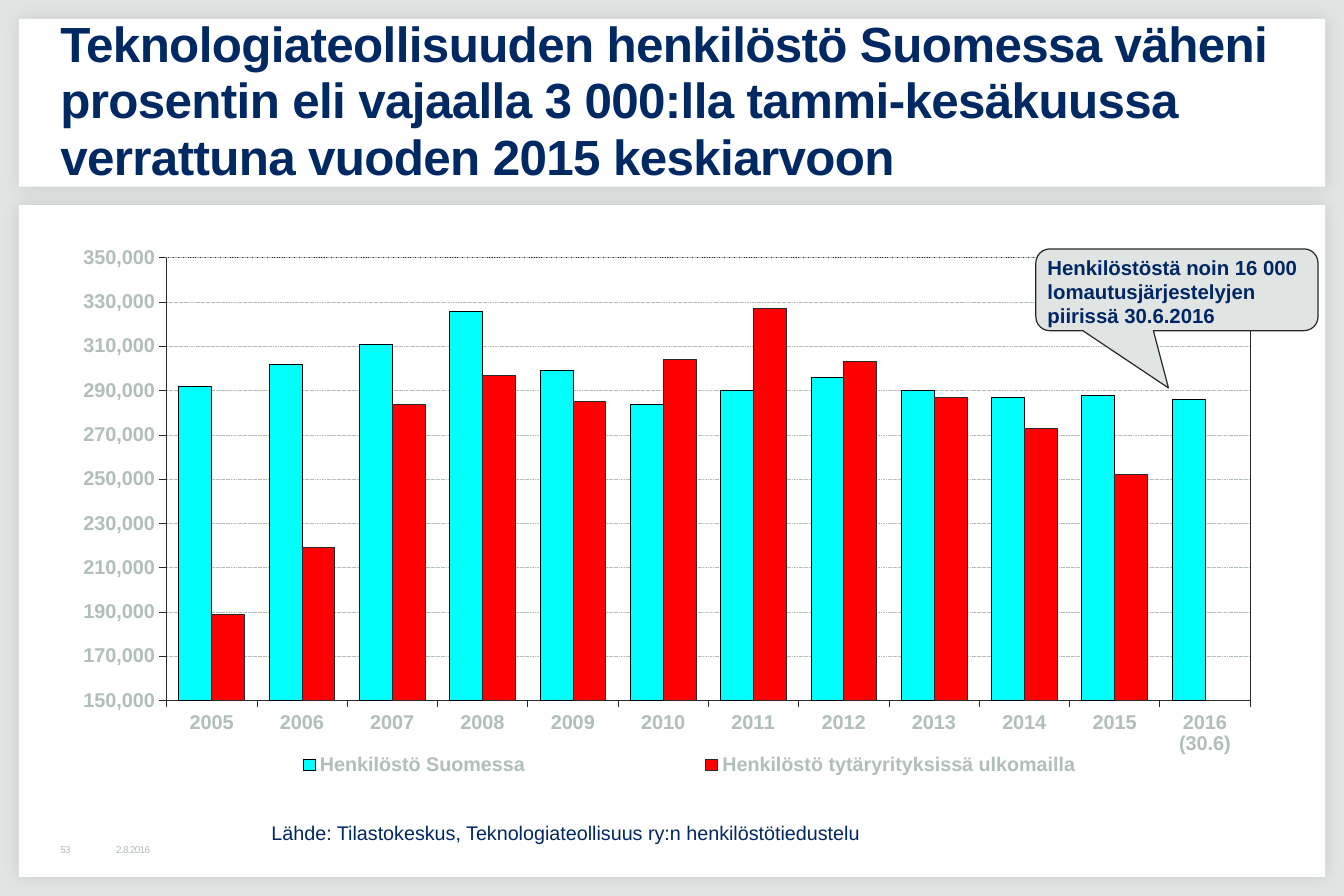
import pptx
import pptx.util
import pptx.dml.color
import pptx.chart.data
import pptx.enum.chart
import pptx.enum.dml
import pptx.enum.shapes
import pptx.enum.text
import pptx.oxml
import pptx.oxml.ns

Pt = pptx.util.Pt
ANCHOR = pptx.enum.text.MSO_ANCHOR
SHAPE = pptx.enum.shapes.MSO_SHAPE
FONT = "Arial"

# Content
COLORS = {"back": "E0E5E3", "panel": "FFFFFF", "title": "002964", "text": "002664",
          "pale": "B1BEB9", "dark": "29282E", "home": "00FFFF", "abroad": "FF0000",
          "edge": "000000"}
TITLE = ("Teknologiateollisuuden henkilöstö Suomessa väheni prosentin eli vajaalla "
         "3 000:lla tammi-kesäkuussa verrattuna vuoden 2015 keskiarvoon")
NOTE = ["Henkilöstöstä noin 16 000", "lomautusjärjestelyjen", "piirissä 30.6.2016"]
SOURCE = "Lähde: Tilastokeskus, Teknologiateollisuus ry:n henkilöstötiedustelu"
YEARS = [str(year) for year in range(2005, 2016)] + ["2016 (30.6)"]
SERIES = [  # name, fill, line, thousands of people
    ("Henkilöstö Suomessa", "home", "edge",
     [292, 302, 311, 326, 299, 284, 290, 296, 290, 287, 288, 286]),
    ("Henkilöstö tytäryrityksissä ulkomailla", "abroad", "dark",
     [189, 219, 284, 297, 285, 304, 327, 303, 287, 273, 252, None]),
]
PANELS = [(11.5, 11.5, 793.5, 102), (11.5, 124.6, 793.5, 408.2)]
TEXTS = [  # lines, box, margins, anchor, size, color, bold, track, spacing
    ([TITLE], (33.8, 22.3, 748.8, 79.2), (2.9, 3.6, 7.2, 3.6), "MIDDLE",
     30, "title", True, -40, 0.95),
    (["53"], (33.8, 510.5, 33.8, 11.5), (2.9,) * 4, "MIDDLE", 6, "pale", False, -40, None),
    (["2.8.2016"], (67.7, 510.5, 102.2, 11.5), (2.9,) * 4, "MIDDLE",
     6, "pale", False, -40, None),
    ([SOURCE], (159.1, 495.4, 431.3, 20.9), (5.8, 2.9, 5.8, 2.9), "TOP",
     12, "text", False, 0, None),
    (NOTE, (629.3, 151.2, 187.2, 52.6), (7.2, 3.6, 7.2, 3.6), "TOP",
     12.4, "text", True, 0, None),
]


def rgb(name):
    return pptx.dml.color.RGBColor.from_string(COLORS[name])


def paint(part, fill, line=None, width=0.25):
    if fill:
        part.fill.solid()
        part.fill.fore_color.rgb = rgb(fill)
    if line:
        part.line.color.rgb = rgb(line)
        part.line.width = Pt(width)
    else:
        part.line.fill.background()


def style(font, size, color, bold):
    font.name, font.size, font.bold = FONT, Pt(size), bold
    font.color.rgb = rgb(color)


def layout(x, y, w, h, inner=False):
    vals = [("layoutTarget", "inner")] if inner else []
    vals += [("xMode", "edge"), ("yMode", "edge"), ("x", x), ("y", y), ("w", w), ("h", h)]
    body = "".join(f'<c:{tag} val="{val}"/>' for tag, val in vals)
    return pptx.oxml.parse_xml(f'<c:layout {pptx.oxml.ns.nsdecls("c")}>'
                               f'<c:manualLayout>{body}</c:manualLayout></c:layout>')


def place(parent, node, after):
    """Set the layout of a chart part, just after the given child if there is one."""
    for old in parent.findall(pptx.oxml.ns.qn("c:layout")):
        parent.remove(old)
    lead = parent.find(pptx.oxml.ns.qn(after)) if after else None
    parent.insert(0 if lead is None else parent.index(lead) + 1, node)


def add_panel(slide, box):
    panel = slide.shapes.add_shape(SHAPE.RECTANGLE, *map(Pt, box))
    paint(panel, "panel")
    panel.shadow.inherit = False
    glow = pptx.oxml.parse_xml(
        f'<a:outerShdw {pptx.oxml.ns.nsdecls("a")} blurRad="{Pt(10)}" dist="0" dir="2700000">'
        '<a:srgbClr val="000000"><a:alpha val="10000"/></a:srgbClr></a:outerShdw>')
    panel._element.spPr.find(pptx.oxml.ns.qn("a:effectLst")).append(glow)


def add_text(slide, lines, box, pads, anchor, size, color, bold, track, space):
    frame = slide.shapes.add_textbox(*map(Pt, box)).text_frame
    frame.word_wrap = True
    frame.vertical_anchor = ANCHOR[anchor]
    (frame.margin_left, frame.margin_top,
     frame.margin_right, frame.margin_bottom) = map(Pt, pads)
    for idx, line in enumerate(lines):
        para = frame.add_paragraph() if idx else frame.paragraphs[0]
        if space:
            para.line_spacing = space
        run = para.add_run()
        run.text = line
        style(run.font, size, color, bold)
        if track:
            run._r.get_or_add_rPr().set("spc", str(track))


def add_chart(slide):
    data = pptx.chart.data.CategoryChartData(number_format="#,##0")
    data.categories = YEARS
    for name, _, _, vals in SERIES:
        data.add_series(name, [val and val * 1000 for val in vals])
    chart = slide.shapes.add_chart(
        pptx.enum.chart.XL_CHART_TYPE.COLUMN_CLUSTERED,
        Pt(33.8), Pt(136.1), Pt(748.1), Pt(340.6), data).chart
    chart.has_title = False
    style(chart.font, 12.1, "dark", True)

    # Columns
    plot = chart.plots[0]
    plot.gap_width, plot.overlap, plot.vary_by_categories = 75, 0, False
    for bars, (_, fill, line, _) in zip(plot.series, SERIES):
        paint(bars.format, fill, line)
        bars.invert_if_negative = False

    # Axes
    for axis in (chart.category_axis, chart.value_axis):
        style(axis.tick_labels.font, 12.1, "pale", True)
        paint(axis.format, None, "dark")
        axis.major_tick_mark = pptx.enum.chart.XL_TICK_MARK.OUTSIDE
        axis.minor_tick_mark = pptx.enum.chart.XL_TICK_MARK.NONE
    scale = chart.value_axis
    scale.minimum_scale, scale.maximum_scale, scale.major_unit = 150000, 350000, 20000
    scale.tick_labels.number_format = "#,##0"
    scale.tick_labels.number_format_is_linked = False
    grid = scale.major_gridlines.format
    paint(grid, None, "pale")
    grid.line.dash_style = pptx.enum.dml.MSO_LINE.SQUARE_DOT

    # Legend, plot frame and their places
    chart.has_legend = True
    legend = chart.legend
    legend.position = pptx.enum.chart.XL_LEGEND_POSITION.BOTTOM
    legend.include_in_layout = False
    style(legend.font, 12, "pale", True)
    place(legend._element, layout(0.06, 0.94, 0.91, 0.05), "c:legendPos")
    area = chart._chartSpace.chart.plotArea
    place(area, layout(0.09, 0.06, 0.88, 0.79, True), None)
    area.append(pptx.oxml.parse_xml(
        f'<c:spPr {pptx.oxml.ns.nsdecls("c", "a")}><a:noFill/><a:ln w="{Pt(0.25)}">'
        f'<a:solidFill><a:srgbClr val="{COLORS["dark"]}"/></a:solidFill></a:ln></c:spPr>'))


def add_bubble(slide):
    bubble = slide.shapes.add_shape(SHAPE.ROUNDED_RECTANGULAR_CALLOUT,
                                    Pt(629.3), Pt(151.2), Pt(171.4), Pt(49.7))
    for idx, val in enumerate((-0.03, 1.2, 0.17)):
        bubble.adjustments[idx] = val
    paint(bubble, "back", "dark", 0.75)
    bubble.shadow.inherit = False


def main():
    deck = pptx.Presentation()
    deck.slide_width, deck.slide_height = Pt(816.5), Pt(544.3)
    slide = deck.slides.add_slide(deck.slide_layouts[6])
    slide.background.fill.solid()
    slide.background.fill.fore_color.rgb = rgb("back")
    for box in PANELS:
        add_panel(slide, box)
    add_chart(slide)
    add_bubble(slide)
    for item in TEXTS:
        add_text(slide, *item)
    deck.save("out.pptx")


if __name__ == "__main__":
    main()
